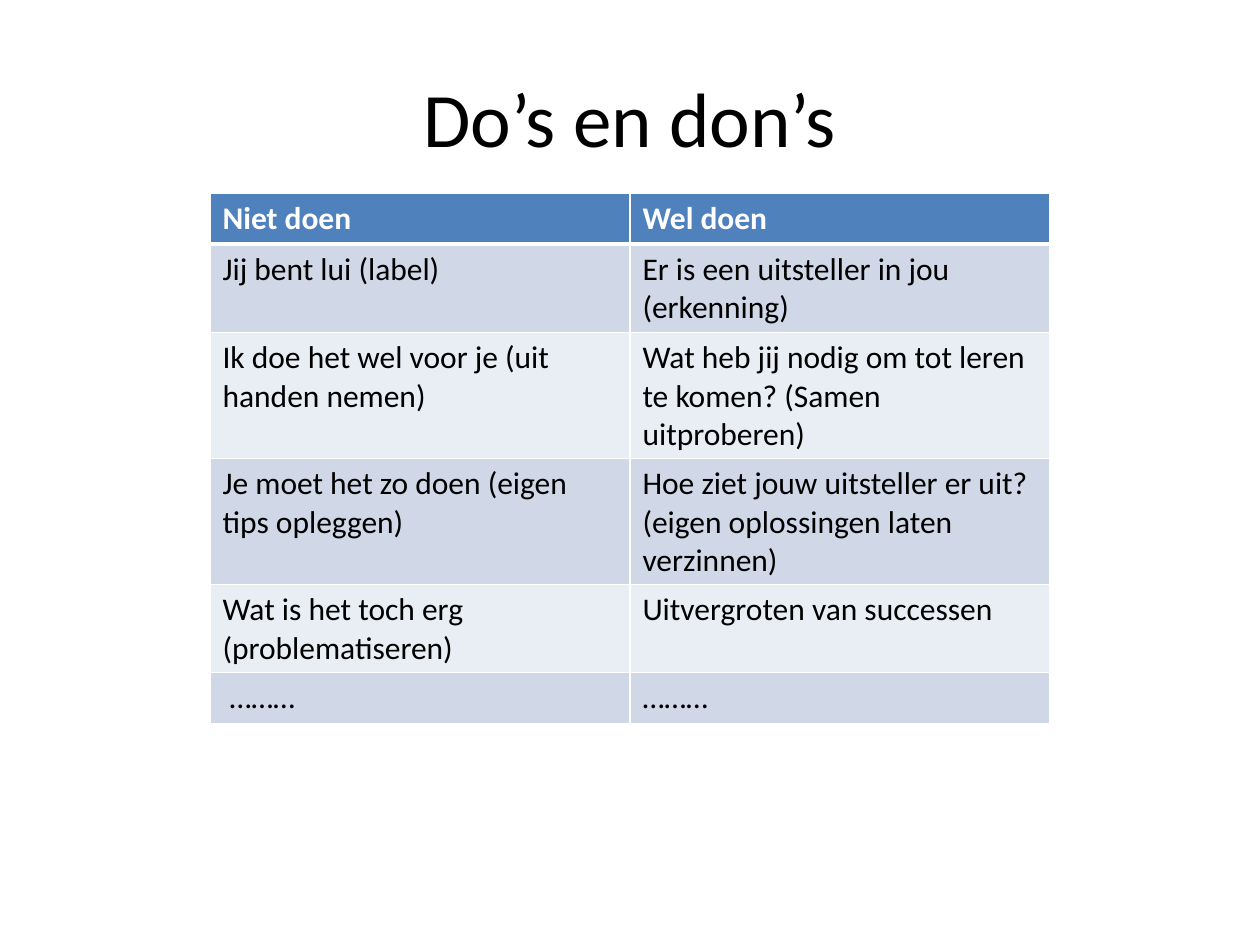
from dataclasses import dataclass

from lxml.etree import SubElement as Sub
from pptx import Presentation
from pptx.dml.color import RGBColor as Rgb
from pptx.enum.text import MSO_ANCHOR as Anchor, PP_ALIGN as Align
from pptx.oxml.ns import qn
from pptx.util import Emu, Pt

FONT = "Calibri"
BLACK = Rgb(0x00, 0x00, 0x00)
WHITE = Rgb(0xFF, 0xFF, 0xFF)
BLUE = Rgb(0x4F, 0x81, 0xBD)
BANDS = (Rgb(0xD0, 0xD8, 0xE8), Rgb(0xE9, 0xED, 0xF4))


@dataclass(frozen=True)
class Pair:
    dont: str
    do: str


PAIRS = [
    Pair("Niet doen", "Wel doen"),
    Pair("Jij bent lui (label)", "Er is een uitsteller in jou (erkenning)"),
    Pair("Ik doe het wel voor je (uit handen nemen)",
         "Wat heb jij nodig om tot leren te komen? (Samen uitproberen)"),
    Pair("Je moet het zo doen (eigen tips opleggen)",
         "Hoe ziet jouw uitsteller er uit?\n(eigen oplossingen laten verzinnen)"),
    Pair("Wat is het toch erg (problematiseren)", "Uitvergroten van successen"),
    Pair(" ………", "………"),
]


def px(num: int) -> Emu:
    return Emu(round(num * 914400 / 126))


def style(frame, size: int, color: Rgb, bold: bool = False) -> None:
    for para in frame.paragraphs:
        for run in para.runs:
            font = run.font
            font.name, font.size, font.bold = FONT, Pt(size), bold
            font.color.rgb = color


def edge(cell, side: str, width: int) -> None:
    line = Sub(cell._tc.get_or_add_tcPr(), qn(f"a:ln{side}"), w=str(Pt(width)))
    Sub(Sub(line, qn("a:solidFill")), qn("a:srgbClr"), val=str(WHITE))


def fill_cell(cell, text: str, row: int) -> None:
    head = row == 0
    cell.text_frame.text = text
    style(cell.text_frame, 18, WHITE if head else BLACK, head)
    # The rule under the header is thicker than the others
    for side in "LRTB":
        thick = (head and side == "B") or (row == 1 and side == "T")
        edge(cell, side, 3 if thick else 1)
    cell.fill.solid()
    cell.fill.fore_color.rgb = BLUE if head else BANDS[(row - 1) % 2]


def add_title(slide, text: str) -> None:
    frame = slide.shapes.add_textbox(px(63), px(38), px(1134), px(158)).text_frame
    frame.word_wrap = True
    frame.vertical_anchor = Anchor.MIDDLE
    frame.text = text
    frame.paragraphs[0].alignment = Align.CENTER
    style(frame, 44, BLACK)


def add_pairs(slide, pairs: list[Pair]) -> None:
    rows = len(pairs)
    table = slide.shapes.add_table(
        rows, 2, px(210), px(193), px(840), px(51 * rows)).table
    for row, pair in enumerate(pairs):
        for col, text in enumerate((pair.dont, pair.do)):
            fill_cell(table.cell(row, col), text, row)


def main() -> None:
    deck = Presentation()
    deck.slide_width, deck.slide_height = px(1260), px(945)
    slide = deck.slides.add_slide(deck.slide_layouts[6])
    add_title(slide, "Do’s en don’s")
    add_pairs(slide, PAIRS)
    deck.save("out.pptx")


if __name__ == "__main__":
    main()
